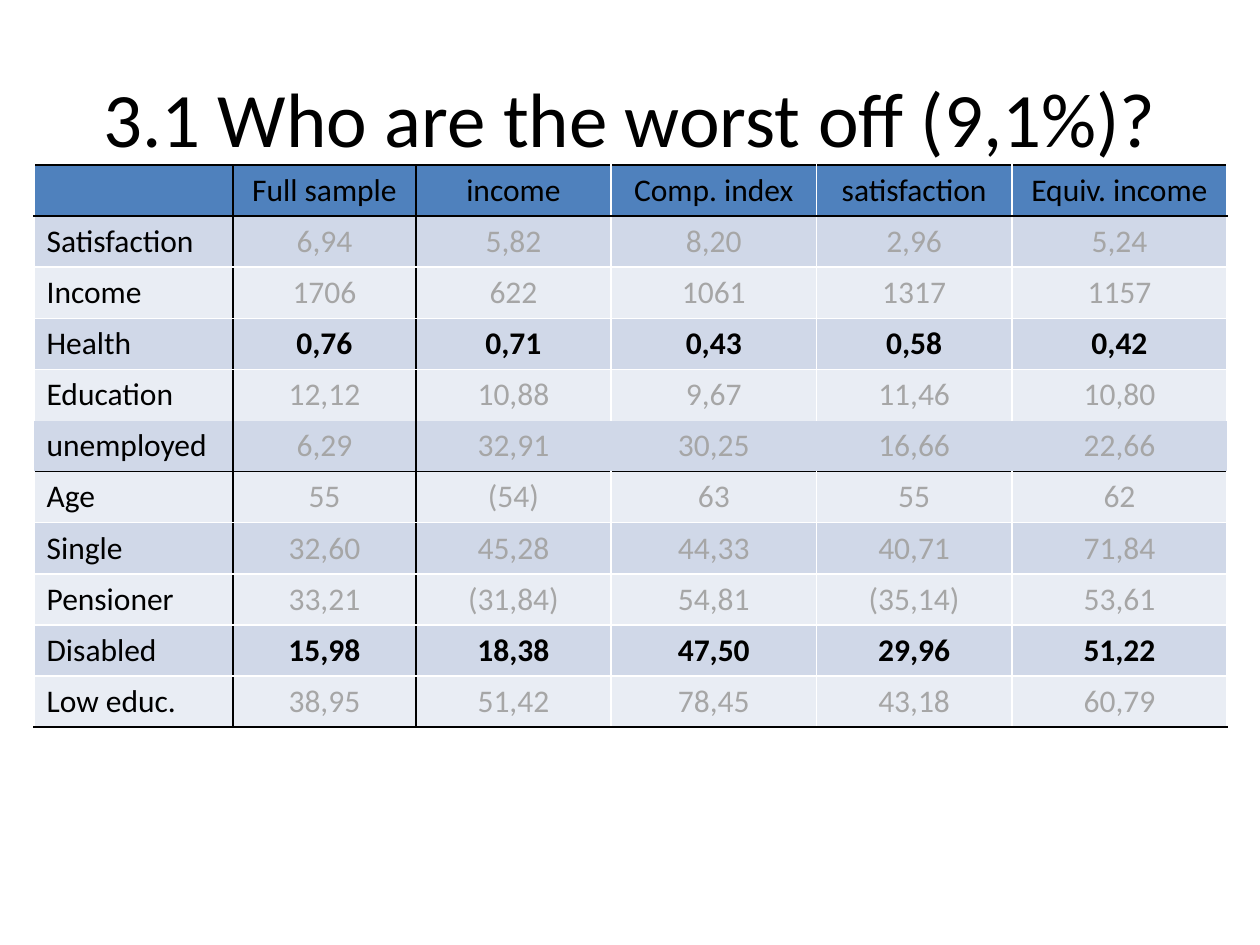
import pptx
import pptx.util
import pptx.dml.color
import pptx.enum.text
import pptx.oxml.ns
import lxml.etree

Inches = pptx.util.Inches
Pt = pptx.util.Pt
ALIGN = pptx.enum.text.PP_ALIGN

TITLE = "3.1 Who are the worst off (9,1%)?"
ROWS = [
    ["", "Full sample", "income", "Comp. index", "satisfaction", "Equiv. income"],
    ["Satisfaction", "6,94", "5,82", "8,20", "2,96", "5,24"],
    ["Income", "1706", "622", "1061", "1317", "1157"],
    ["Health", "0,76", "0,71", "0,43", "0,58", "0,42"],
    ["Education", "12,12", "10,88", "9,67", "11,46", "10,80"],
    ["unemployed", "6,29", "32,91", "30,25", "16,66", "22,66"],
    ["Age", "55", "(54)", "63", "55", "62"],
    ["Single", "32,60", "45,28", "44,33", "40,71", "71,84"],
    ["Pensioner", "33,21", "(31,84)", "54,81", "(35,14)", "53,61"],
    ["Disabled", "15,98", "18,38", "47,50", "29,96", "51,22"],
    ["Low educ.", "38,95", "51,42", "78,45", "43,18", "60,79"],
]
HIGHLIGHTED = {"Health", "Disabled"}
OPEN_ROW = 5
COLUMN_WIDTHS = [1.58, 1.45, 1.55, 1.63, 1.55, 1.71]
TABLE_HEIGHT = 4.46
BLACK_HORIZONTALS = {0, 1, 6, 11}
BLACK_VERTICALS = {1, 2}
BLACK, WHITE, GREY = "000000", "FFFFFF", "A6A6A6"
HEADER_FILL, ODD_FILL, EVEN_FILL = "4F81BD", "D0D8E8", "E9EDF4"


def color(value):
    return pptx.dml.color.RGBColor.from_string(value)


def write(para, text, size, ink, bold=False):
    span = para.add_run()
    span.text = text
    span.font.name = "Calibri"
    span.font.size = Pt(size)
    span.font.bold = bold
    span.font.color.rgb = color(ink)


def horizontal_ink(edge):
    if edge in BLACK_HORIZONTALS:
        return BLACK
    return None if edge == OPEN_ROW else WHITE


def vertical_ink(edge, row):
    if edge in BLACK_VERTICALS:
        return BLACK
    return None if row == OPEN_ROW else WHITE


def set_borders(cell, inks):
    qn = pptx.oxml.ns.qn
    properties = cell._tc.get_or_add_tcPr()
    for position, (side, ink) in enumerate(inks.items()):
        line = lxml.etree.Element(qn(f"a:ln{side}"), w=str(Pt(1)))
        properties.insert(position, line)
        if ink is None:
            lxml.etree.SubElement(line, qn("a:noFill"))
        else:
            fill = lxml.etree.SubElement(line, qn("a:solidFill"))
            lxml.etree.SubElement(fill, qn("a:srgbClr"), val=ink)


def fill_cell(cell, row, column):
    text = ROWS[row][column]
    highlighted = column > 0 and ROWS[row][0] in HIGHLIGHTED
    plain = row == 0 or column == 0 or highlighted
    para = cell.text_frame.paragraphs[0]
    para.alignment = ALIGN.CENTER if column else ALIGN.LEFT
    if text:
        write(para, text, 18, BLACK if plain else GREY, highlighted)
    cell.fill.solid()
    band = ODD_FILL if row % 2 else EVEN_FILL
    cell.fill.fore_color.rgb = color(band if row else HEADER_FILL)
    set_borders(cell, {
        "L": vertical_ink(column, row),
        "R": vertical_ink(column + 1, row),
        "T": horizontal_ink(row),
        "B": horizontal_ink(row + 1),
    })


def add_title(page):
    box = page.shapes.title
    box.left, box.top = Inches(0.5), Inches(0.3)
    box.width, box.height = Inches(9), Inches(1.25)
    box.text_frame.vertical_anchor = pptx.enum.text.MSO_ANCHOR.MIDDLE
    para = box.text_frame.paragraphs[0]
    para.alignment = ALIGN.CENTER
    write(para, TITLE, 44, BLACK)


def add_results(page):
    table = page.shapes.add_table(
        len(ROWS), len(COLUMN_WIDTHS), Inches(0.27), Inches(1.31),
        Inches(sum(COLUMN_WIDTHS)), Inches(TABLE_HEIGHT)).table
    for column, width in zip(table.columns, COLUMN_WIDTHS):
        column.width = Inches(width)
    for row in range(len(ROWS)):
        for column in range(len(COLUMN_WIDTHS)):
            fill_cell(table.cell(row, column), row, column)


def main():
    deck = pptx.Presentation()
    deck.slide_width, deck.slide_height = Inches(10), Inches(7.5)
    page = deck.slides.add_slide(deck.slide_layouts.get_by_name("Title Only"))
    page.background.fill.solid()
    page.background.fill.fore_color.rgb = color(WHITE)
    add_title(page)
    add_results(page)
    deck.save("out.pptx")


if __name__ == "__main__":
    main()
